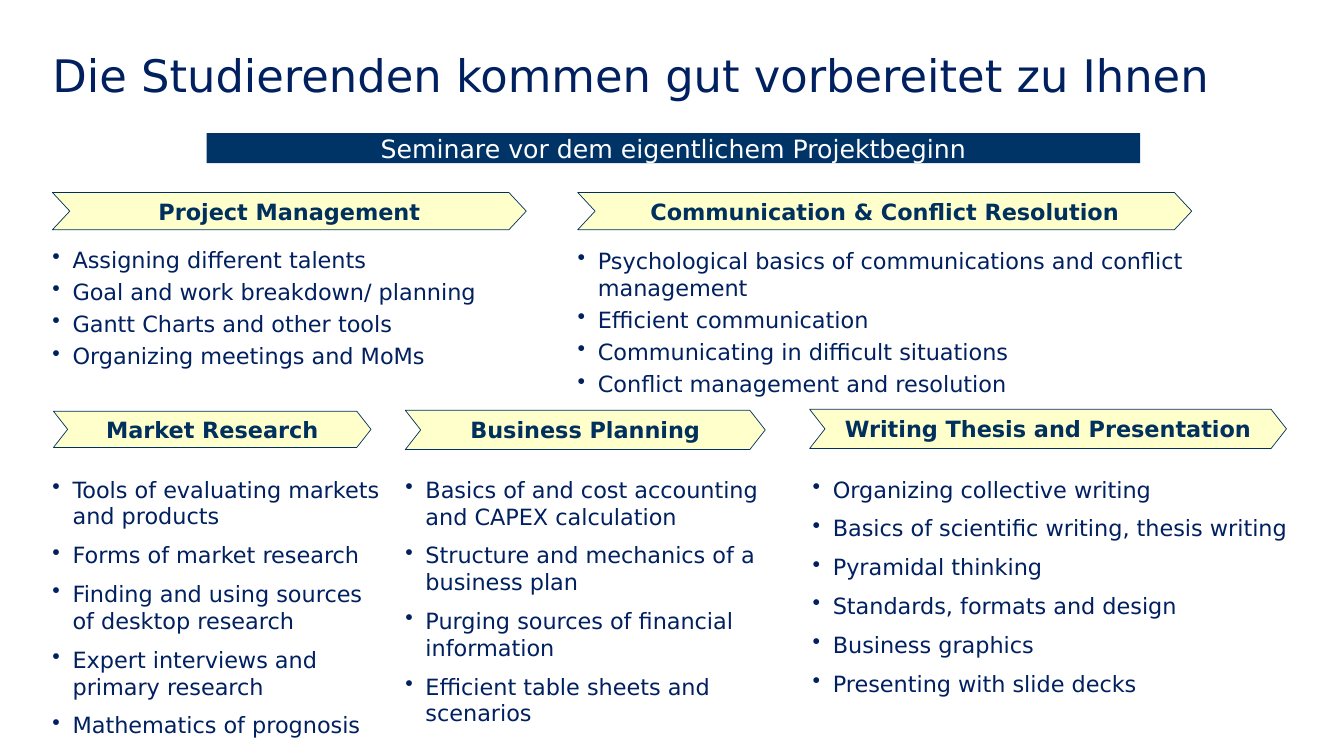
from pptx import Presentation
from pptx.dml.color import RGBColor
from pptx.enum.shapes import MSO_SHAPE
from pptx.enum.text import MSO_ANCHOR, PP_ALIGN
from pptx.oxml.ns import qn
from pptx.util import Inches, Pt
from lxml.etree import SubElement

FONT = "DejaVu Sans"
COLORS = {"text": "002060", "banner": "003366", "heading": "00305D",
          "chevron": "FFFFCC", "white": "FFFFFF"}
TIGHT, LOOSE = 3.8, 8.5  # points between bullets

# Each seminar: heading, heading box, chevron point, bullet box, gap, bullets
SEMINARS = [
    ("Project Management", (0.52, 1.91, 4.7, 0.37), 0.467,
     (0.52, 2.44, 4.37, 1.73), TIGHT,
     ["Assigning different talents", "Goal and work breakdown/ planning",
      "Gantt Charts and other tools", "Organizing meetings and MoMs"]),
    ("Communication & Conflict Resolution", (5.73, 1.91, 6.09, 0.37), 0.467,
     (5.73, 2.45, 6.31, 1.73), TIGHT,
     ["Psychological basics of communications and conflict management",
      "Efficient communication", "Communicating in difficult situations",
      "Conflict management and resolution"]),
    ("Market Research", (0.53, 4.08, 3.15, 0.36), 0.392,
     (0.52, 4.72, 3.35, 2.17), LOOSE,
     ["Tools of evaluating markets and products", "Forms of market research",
      "Finding and using sources of desktop research",
      "Expert interviews and primary research", "Mathematics of prognosis"]),
    ("Business Planning", (4.02, 4.07, 3.57, 0.39), 0.392,
     (4.02, 4.72, 3.89, 2.48), LOOSE,
     ["Basics of and cost accounting and CAPEX calculation",
      "Structure and mechanics of a business plan",
      "Purging sources of financial information",
      "Efficient table sheets and scenarios"]),
    ("Writing Thesis and Presentation", (8.03, 4.06, 4.73, 0.39), 0.392,
     (8.06, 4.72, 4.78, 2.72), LOOSE,
     ["Organizing collective writing",
      "Basics of scientific writing, thesis writing", "Pyramidal thinking",
      "Standards, formats and design", "Business graphics",
      "Presenting with slide decks"]),
]


def color(name):
    return RGBColor.from_string(COLORS[name])


def set_frame(shape, anchor=MSO_ANCHOR.TOP, wrap=True):
    frame = shape.text_frame
    frame.margin_left = frame.margin_right = 0
    frame.margin_top = frame.margin_bottom = 0
    frame.vertical_anchor = anchor
    frame.word_wrap = wrap
    return frame


def style(paragraph, size, color_name, bold=False, align=PP_ALIGN.LEFT):
    paragraph.alignment = align
    font = paragraph.font
    font.name, font.size, font.bold = FONT, Pt(size), bold
    font.color.rgb = color(color_name)


def add_block(page, kind, box, fill):
    shape = page.shapes.add_shape(kind, *map(Inches, box))
    shape.shadow.inherit = False
    shape.fill.solid()
    shape.fill.fore_color.rgb = color(fill)
    shape.line.fill.background()
    return shape


def add_title(page, box, text):
    frame = set_frame(page.shapes.add_textbox(*map(Inches, box)))
    para = frame.paragraphs[0]
    para.text = text
    para.line_spacing = 0.9
    style(para, 32, "text")


def add_banner(page, box, text):
    para = set_frame(add_block(page, MSO_SHAPE.RECTANGLE, box, "banner")).paragraphs[0]
    para.text = text
    style(para, 18, "white", align=PP_ALIGN.CENTER)


def add_heading(page, box, text, point):
    chevron = add_block(page, MSO_SHAPE.CHEVRON, box, "chevron")
    chevron.adjustments[0] = point
    chevron.line.color.rgb = color("heading")
    chevron.line.width = Pt(0.5)
    para = set_frame(chevron, MSO_ANCHOR.MIDDLE, wrap=False).paragraphs[0]
    para.text = text
    style(para, 16, "heading", bold=True, align=PP_ALIGN.CENTER)


def add_bullets(page, box, bullets, gap):
    frame = set_frame(page.shapes.add_textbox(*map(Inches, box)))
    for index, text in enumerate(bullets):
        para = frame.add_paragraph() if index else frame.paragraphs[0]
        para.text = text
        para.space_before = Pt(gap if index else 0)
        # Hanging bullet
        properties = para._p.get_or_add_pPr()
        properties.set("marL", str(Inches(0.2)))
        properties.set("indent", str(Inches(-0.2)))
        SubElement(properties, qn("a:buChar")).set("char", "•")
        style(para, 16, "text")


def build_seminar_slide(deck):
    page = deck.slides.add_slide(deck.slide_layouts[6])
    add_title(page, (0.52, 0.53, 12.33, 1.21),
              "Die Studierenden kommen gut vorbereitet zu Ihnen")
    add_banner(page, (2.05, 1.32, 9.26, 0.3),
               "Seminare vor dem eigentlichem Projektbeginn")
    for heading, heading_box, point, bullet_box, gap, bullets in SEMINARS:
        add_heading(page, heading_box, heading, point)
        add_bullets(page, bullet_box, bullets, gap)


def main():
    deck = Presentation()
    deck.slide_width, deck.slide_height = Inches(13.33), Inches(7.5)
    build_seminar_slide(deck)
    deck.save("out.pptx")


if __name__ == "__main__":
    main()
